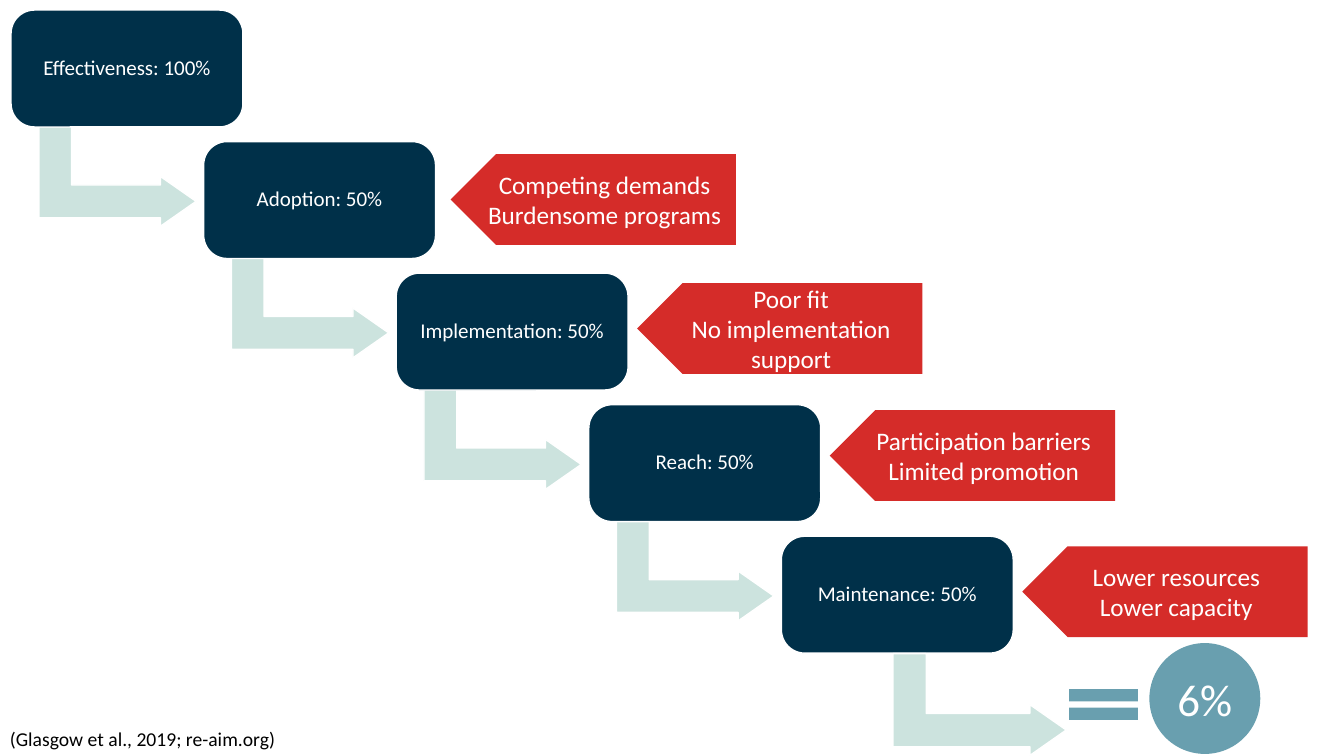
from dataclasses import dataclass

from pptx import Presentation
from pptx.dml.color import RGBColor
from pptx.enum import shapes, text
from pptx.util import Inches, Pt

SHAPE = shapes.MSO_SHAPE


@dataclass(frozen=True)
class Theme:
    font: str = "Calibri"
    navy: str = "003049"
    mint: str = "CCE3DE"
    red: str = "D52C29"
    teal: str = "699FAF"
    white: str = "FFFFFF"
    black: str = "000000"
    step_size: int = 15
    barrier_size: int = 18
    result_size: int = 32
    source_size: int = 14


THEME = Theme()

# Each step of the cascade, with the barriers beside it and their position
STEPS = [
    ("Effectiveness: 100%", None, None),
    ("Adoption: 50%", "Competing demands\nBurdensome programs", (4.47, 1.53)),
    ("Implementation: 50%", "Poor fit\nNo implementation support", (6.32, 2.81)),
    ("Reach: 50%", "Participation barriers\nLimited promotion", (8.23, 4.07)),
    ("Maintenance: 50%", "Lower resources\nLower capacity", (10.14, 5.42)),
]
STEP_X, STEP_Y = 1.91, 1.305


def add_block(s, kind, x, y, w, h, fill, outlined=False):
    """Add a flat preset shape, with a thin white outline if asked for."""
    sp = s.shapes.add_shape(kind, Inches(x), Inches(y), Inches(w), Inches(h))
    sp.shadow.inherit = False
    sp.fill.solid()
    sp.fill.fore_color.rgb = RGBColor.from_string(fill)
    if outlined:
        sp.line.color.rgb = RGBColor.from_string(THEME.white)
        sp.line.width = Pt(1)
    else:
        sp.line.fill.background()
    return sp


def write(sp, words, size, color=THEME.white, align=text.PP_ALIGN.CENTER):
    """Fill a shape with text, one paragraph for each line."""
    tf = sp.text_frame
    tf.text = words
    tf.word_wrap = True
    for p in tf.paragraphs:
        p.alignment = align
        for r in p.runs:
            r.font.name = THEME.font
            r.font.size = Pt(size)
            r.font.color.rgb = RGBColor.from_string(color)
    return tf


def add_step(s, x, y, label):
    sp = add_block(s, SHAPE.ROUNDED_RECTANGLE, x, y, 2.3, 1.16, THEME.navy, True)
    sp.adjustments[0] = 0.2
    tf = write(sp, label, THEME.step_size)
    tf.vertical_anchor = text.MSO_ANCHOR.MIDDLE
    tf.margin_left = tf.margin_right = Inches(0.05)
    tf.paragraphs[0].line_spacing = 0.9


def add_arrow(s, x, y, w, h):
    """Add an arrow that goes down and then right."""
    sp = add_block(s, SHAPE.BENT_UP_ARROW, x, y, w, h, THEME.mint, True)
    sp.rotation = 90
    for i, value in enumerate((0.328, 0.25, 0.358)):
        sp.adjustments[i] = value


def add_barrier(s, x, y, words):
    """Add a tag that points left at its step."""
    sp = add_block(s, SHAPE.PENTAGON, x, y, 2.83, 0.9, THEME.red)
    sp.element.spPr.xfrm.set("flipH", "1")
    write(sp, words, THEME.barrier_size).vertical_anchor = text.MSO_ANCHOR.MIDDLE


def add_result(s):
    add_block(s, SHAPE.MATH_EQUAL, 10.48, 6.73, 0.93, 0.52, THEME.teal)
    sp = add_block(s, SHAPE.OVAL, 11.4, 6.38, 1.1, 1.1, THEME.teal)
    write(sp, "6%", THEME.result_size).vertical_anchor = text.MSO_ANCHOR.MIDDLE


def add_source(s, words):
    sp = s.shapes.add_textbox(Inches(0), Inches(7.16), Inches(5.2), Inches(0.34))
    tf = write(sp, words, THEME.source_size, THEME.black, text.PP_ALIGN.LEFT)
    tf.auto_size = text.MSO_AUTO_SIZE.SHAPE_TO_FIT_TEXT


def main():
    prs = Presentation()
    prs.slide_width, prs.slide_height = Inches(13.33), Inches(7.5)
    s = prs.slides.add_slide(prs.slide_layouts[6])

    # Staircase of steps, joined by arrows
    for i, (label, _, _) in enumerate(STEPS):
        dx, dy = i * STEP_X, i * STEP_Y
        if i < len(STEPS) - 1:
            add_arrow(s, 0.67 + dx, 0.97 + dy, 0.99, 1.56)
        add_step(s, 0.11 + dx, 0.1 + dy, label)

    # Final share
    add_result(s)

    # Barriers beside the steps
    for _, barriers, place in STEPS:
        if barriers:
            add_barrier(s, *place, barriers)

    # Arrow to the final share, and the citation
    add_arrow(s, 9.21, 6.13, 1.01, 1.72)
    add_source(s, "(Glasgow et al., 2019; re-aim.org)")

    prs.save("out.pptx")


if __name__ == "__main__":
    main()
